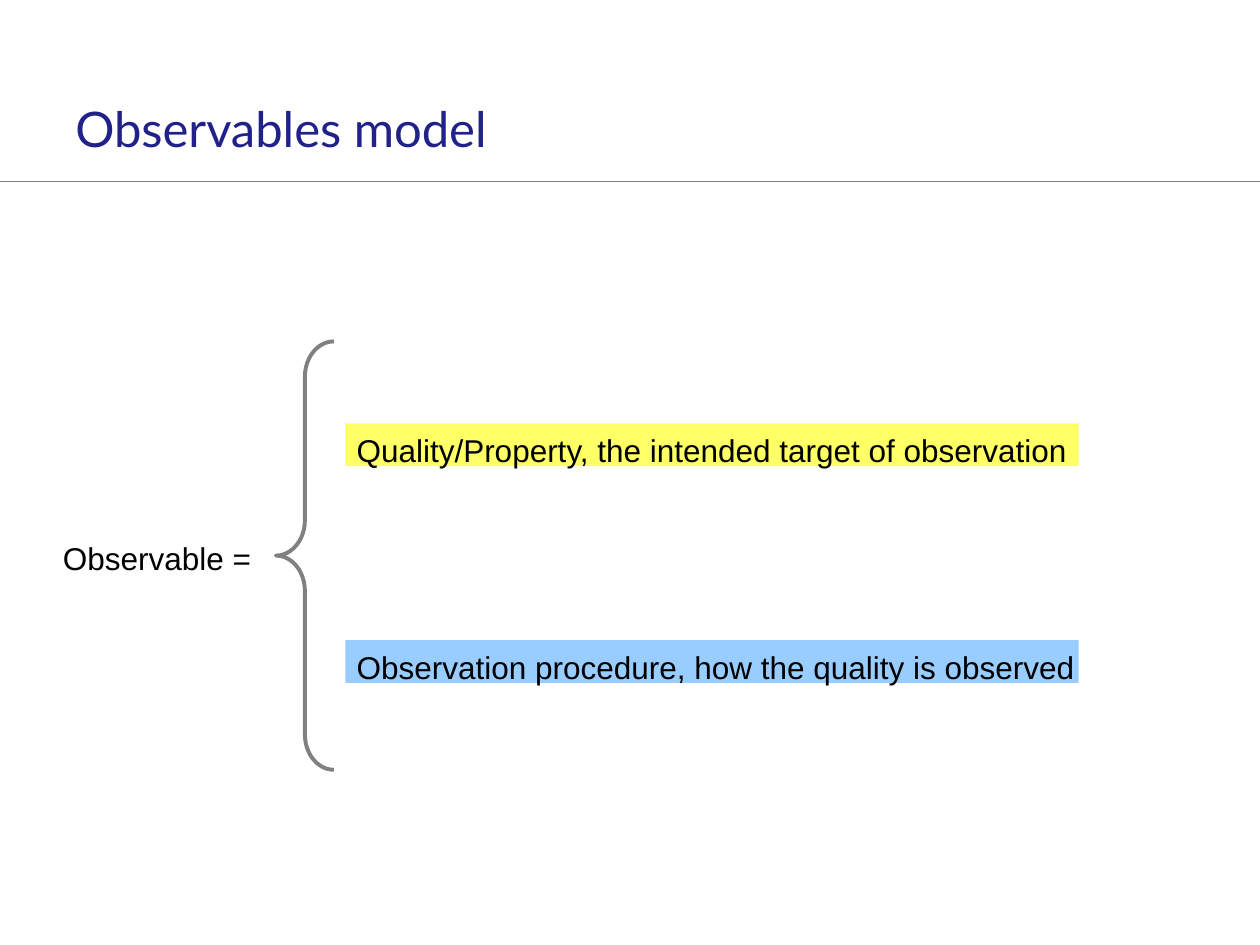
from pptx import Presentation
from pptx.dml.color import RGBColor
from pptx.enum.shapes import MSO_CONNECTOR, MSO_SHAPE
from pptx.enum.text import MSO_ANCHOR, PP_ALIGN
from pptx.oxml.ns import qn
from pptx.util import Inches, Pt
from lxml import etree

COLORS = {
    "title": "21218A",
    "text": "000000",
    "gray": "808080",
    "quality": "FFFF66",
    "procedure": "99CCFF",
}


def color(name):
    return RGBColor.from_string(COLORS[name])


def write(box, text, font, size, text_color, anchor, insets):
    frame = box.text_frame
    frame.word_wrap = True
    frame.vertical_anchor = anchor
    (frame.margin_left, frame.margin_top,
     frame.margin_right, frame.margin_bottom) = [Inches(inset) for inset in insets]
    para = frame.paragraphs[0]
    para.text = text
    para.alignment = PP_ALIGN.LEFT
    para.font.name = font
    para.font.size = Pt(size)
    para.font.color.rgb = color(text_color)


deck = Presentation()
deck.slide_width, deck.slide_height = Inches(10), Inches(7.5)
page = deck.slides.add_slide(deck.slide_layouts[6])

# Rule under the title
rule = page.shapes.add_connector(
    MSO_CONNECTOR.STRAIGHT, Inches(0), Inches(1.44), Inches(10), Inches(1.44))
rule.line.color.rgb = color("gray")
rule.line.width = Pt(0.75)
etree.SubElement(rule._element.spPr, qn("a:effectLst"))

# Title
title = page.shapes.add_textbox(Inches(0.5), Inches(0.7), Inches(7.23), Inches(0.63))
write(title, "Observables model", "Lato", 28, "title", MSO_ANCHOR.MIDDLE, [0.1] * 4)

# Term being defined; no right inset, so each label stays on one line
label_insets = [0.09, 0.06, 0, 0.04]
term = page.shapes.add_textbox(Inches(0.41), Inches(4.22), Inches(1.67), Inches(1.54))
write(term, "Observable =", "Arial", 18, "text", MSO_ANCHOR.TOP, label_insets)

# Brace
brace = page.shapes.add_shape(
    MSO_SHAPE.LEFT_BRACE, Inches(2.19), Inches(2.71), Inches(0.46), Inches(3.4))
brace.shadow.inherit = False
brace.adjustments[0] = 0.61
brace.fill.background()
brace.line.color.rgb = color("gray")
brace.line.width = Pt(2.25)

# Two parts of an observable
parts = [
    ("quality", 3.36, "Quality/Property, the intended target of observation"),
    ("procedure", 5.08, "Observation procedure, how the quality is observed"),
]
for fill, top, text in parts:
    bar = page.shapes.add_shape(
        MSO_SHAPE.RECTANGLE, Inches(2.74), Inches(top), Inches(5.82), Inches(0.34))
    bar.shadow.inherit = False
    bar.fill.solid()
    bar.fill.fore_color.rgb = color(fill)
    bar.line.fill.background()
    write(bar, text, "Arial", 18, "text", MSO_ANCHOR.TOP, label_insets)

deck.save("out.pptx")
